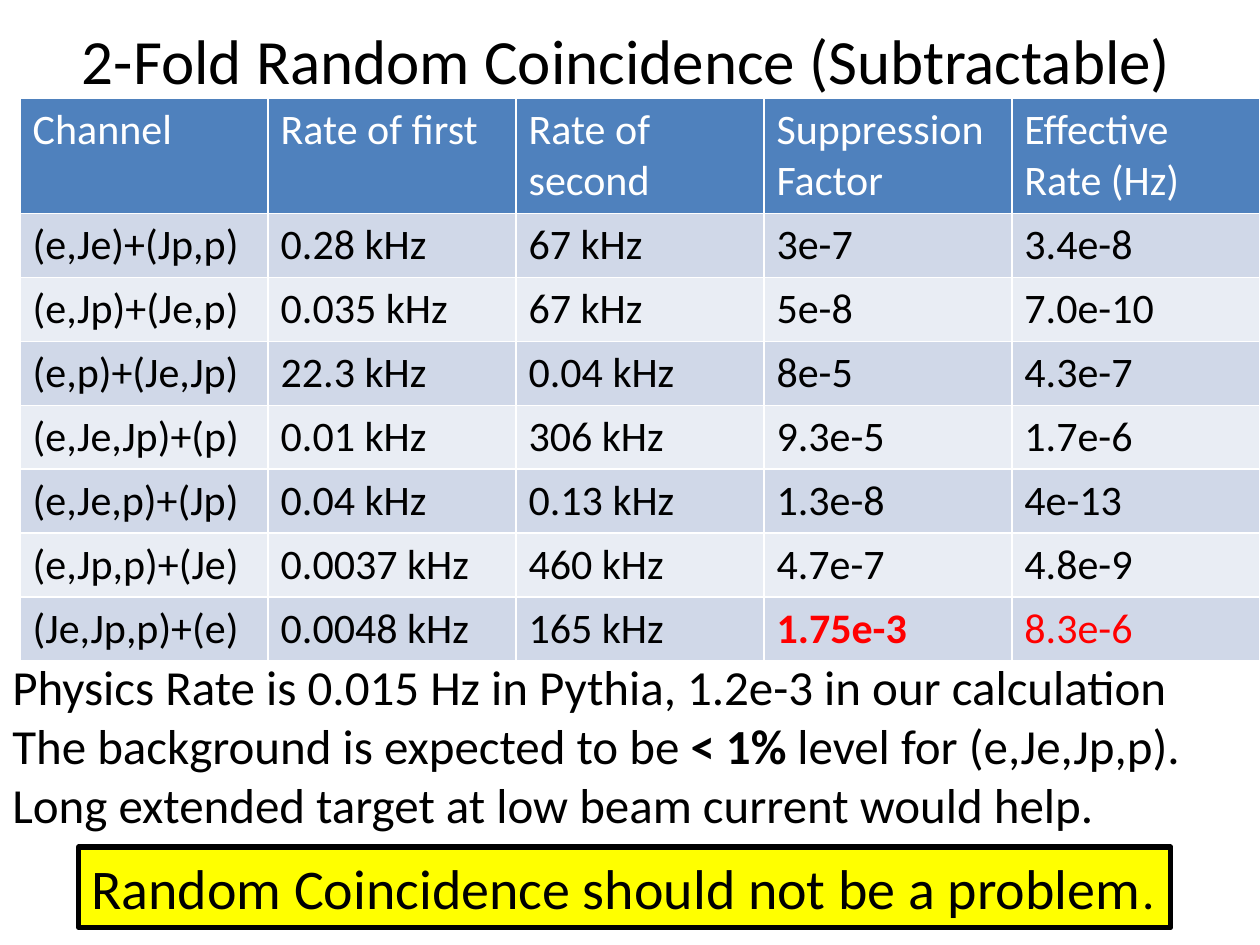
from pptx import Presentation
from pptx.dml.color import RGBColor
from pptx.enum.shapes import MSO_SHAPE as Shape
from pptx.enum.text import MSO_ANCHOR as Anchor, MSO_AUTO_SIZE as AutoSize, PP_ALIGN as Align
from pptx.util import Pt

HEADERS = ["Channel", "Rate of first", "Rate of second", "Suppression Factor",
           "Effective Rate (Hz)"]
RATES = [
    ["(e,Je)+(Jp,p)", "0.28 kHz", "67 kHz", "3e-7", "3.4e-8"],
    ["(e,Jp)+(Je,p)", "0.035 kHz", "67 kHz", "5e-8", "7.0e-10"],
    ["(e,p)+(Je,Jp)", "22.3 kHz", "0.04 kHz", "8e-5", "4.3e-7"],
    ["(e,Je,Jp)+(p)", "0.01 kHz", "306 kHz", "9.3e-5", "1.7e-6"],
    ["(e,Je,p)+(Jp)", "0.04 kHz", "0.13 kHz", "1.3e-8", "4e-13"],
    ["(e,Jp,p)+(Je)", "0.0037 kHz", "460 kHz", "4.7e-7", "4.8e-9"],
    ["(Je,Jp,p)+(e)", "0.0048 kHz", "165 kHz", "1.75e-3", "8.3e-6"],
]
# Formats of the dominant background, by row and column of the table
HIGHLIGHTS = {(7, 3): {"color": "FF0000", "bold": True}, (7, 4): {"color": "FF0000"}}
CONCLUSIONS = [
    [("Physics Rate is 0.015 Hz in Pythia, 1.2e-3 in our calculation", {})],
    [("The background is expected to be ", {}), ("< 1% ", {"bold": True}),
     ("level for (e,Je,Jp,p).", {})],
    [("Long extended target at low beam current would help.", {})],
]
MESSAGE = [[("Random Coincidence should not be a problem", {}), (".", {"size": Pt(28)})]]


def rgb(value):
    return RGBColor.from_string(value)


class SlideBuilder:
    font = "Calibri"
    ink = "000000"
    header_fill = "4F81BD"
    band_fills = ("E9EDF4", "D0D8E8")

    def __init__(self, slide):
        self.slide = slide

    def add_runs(self, frame, paragraphs, size, color=ink, align=Align.LEFT):
        for index, runs in enumerate(paragraphs):
            paragraph = frame.add_paragraph() if index else frame.paragraphs[0]
            paragraph.alignment = align
            for text, changes in runs:
                run = paragraph.add_run()
                run.text = text
                style = {"name": self.font, "size": Pt(size), "bold": False,
                         "color": color} | changes
                run.font.color.rgb = rgb(style.pop("color"))
                for name, value in style.items():
                    setattr(run.font, name, value)

    def title(self, text, left, top, width, height, size):
        shape = self.slide.shapes.title
        place = {"left": left, "top": top, "width": width, "height": height}
        for name, value in place.items():
            setattr(shape, name, Pt(value))
        shape.text_frame.vertical_anchor = Anchor.MIDDLE
        self.add_runs(shape.text_frame, [[(text, {})]], size, align=Align.CENTER)

    def table(self, rows, left, top, column_width, header_height, row_height, size):
        columns = len(rows[0])
        height = header_height + row_height * (len(rows) - 1)
        table = self.slide.shapes.add_table(
            len(rows), columns, Pt(left), Pt(top),
            Pt(column_width * columns), Pt(height)).table
        for row_index, values in enumerate(rows):
            table.rows[row_index].height = Pt(row_height if row_index else header_height)
            fill = self.band_fills[row_index % 2] if row_index else self.header_fill
            color = self.ink if row_index else "FFFFFF"
            for column_index, value in enumerate(values):
                cell = table.cell(row_index, column_index)
                cell.fill.solid()
                cell.fill.fore_color.rgb = rgb(fill)
                changes = HIGHLIGHTS.get((row_index, column_index), {})
                self.add_runs(cell.text_frame, [[(value, changes)]], size, color)

    def text(self, paragraphs, left, top, width, height, size):
        box = self.slide.shapes.add_textbox(Pt(left), Pt(top), Pt(width), Pt(height))
        box.text_frame.word_wrap = True
        box.text_frame.auto_size = AutoSize.SHAPE_TO_FIT_TEXT
        self.add_runs(box.text_frame, paragraphs, size)

    def banner(self, paragraphs, left, top, width, height, size):
        shape = self.slide.shapes.add_shape(
            Shape.RECTANGLE, Pt(left), Pt(top), Pt(width), Pt(height))
        shape.shadow.inherit = False
        shape.fill.solid()
        shape.fill.fore_color.rgb = rgb("FFFF00")
        shape.line.color.rgb = rgb(self.ink)
        shape.line.width = Pt(3)
        frame = shape.text_frame
        frame_format = {"word_wrap": False, "vertical_anchor": Anchor.TOP,
                        "auto_size": AutoSize.SHAPE_TO_FIT_TEXT}
        for name, value in frame_format.items():
            setattr(frame, name, value)
        self.add_runs(frame, paragraphs, size)


def main():
    presentation = Presentation()
    presentation.slide_width, presentation.slide_height = Pt(720), Pt(540)
    title_only = presentation.slide_layouts[5]
    builder = SlideBuilder(presentation.slides.add_slide(title_only))

    # Heading
    builder.title("2-Fold Random Coincidence (Subtractable)", 28, 0, 660, 68, size=36)

    # Rates by channel
    builder.table([HEADERS] + RATES, 11.5, 56.3, column_width=141.7,
                  header_height=65.8, row_height=36, size=24)

    # Conclusions and closing message
    builder.text(CONCLUSIONS, 0, 371.5, 720, 109, size=28)
    builder.banner(MESSAGE, 45, 484, 624, 46, size=32)

    presentation.save("out.pptx")


if __name__ == "__main__":
    main()
